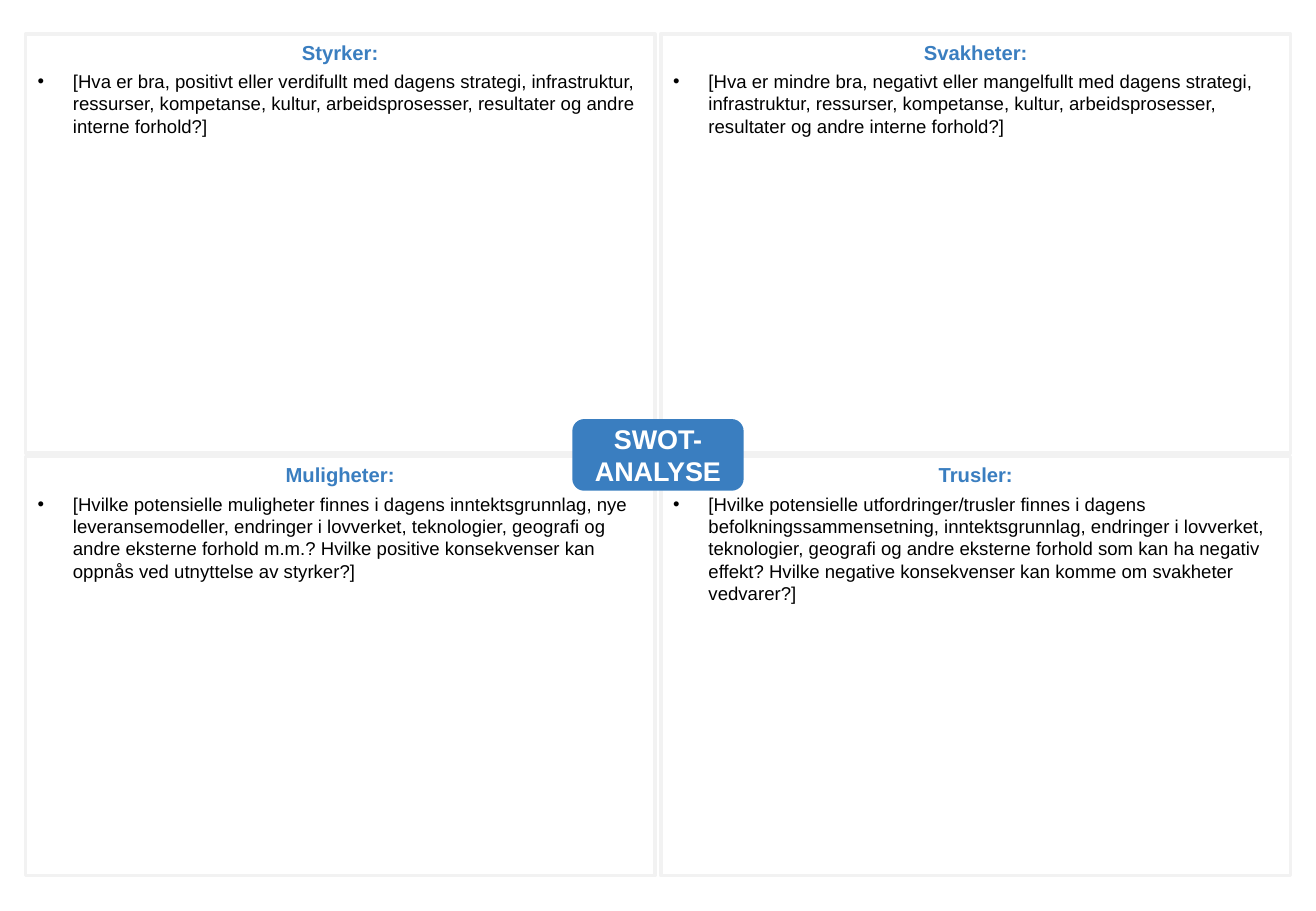
import dataclasses

import lxml.etree
import pptx
import pptx.dml.color
import pptx.enum.shapes
import pptx.enum.text
import pptx.oxml.ns
import pptx.util

Inches = pptx.util.Inches
Pt = pptx.util.Pt
Align = pptx.enum.text.PP_ALIGN
Anchor = pptx.enum.text.MSO_ANCHOR
Kind = pptx.enum.shapes.MSO_SHAPE


@dataclasses.dataclass(frozen=True)
class Theme:
    font: str = "Arial"
    blue: str = "3A7EC0"
    white: str = "FFFFFF"
    black: str = "000000"
    edge: str = "F2F2F2"
    title: int = 16
    head: int = 12
    body: int = 11


THEME = Theme()
LEFT, TOP = 0.21, 0.28
WIDE, HIGH = 5.18, 3.45
STEP_X, STEP_Y = 5.23, 3.48
BADGE = (4.71, 3.45, 1.41, 0.59)

PARTS = [
    ("Styrker:", "[Hva er bra, positivt eller verdifullt med dagens strategi, "
     "infrastruktur, ressurser, kompetanse, kultur, arbeidsprosesser, "
     "resultater og andre interne forhold?]"),
    ("Svakheter:", "[Hva er mindre bra, negativt eller mangelfullt med dagens "
     "strategi, infrastruktur, ressurser, kompetanse, kultur, "
     "arbeidsprosesser, resultater og andre interne forhold?]"),
    ("Muligheter:", "[Hvilke potensielle muligheter finnes i dagens "
     "inntektsgrunnlag, nye leveransemodeller, endringer i lovverket, "
     "teknologier, geografi og andre eksterne forhold m.m.? Hvilke positive "
     "konsekvenser kan oppnås ved utnyttelse av styrker?]"),
    ("Trusler:", "[Hvilke potensielle utfordringer/trusler finnes i dagens "
     "befolkningssammensetning, inntektsgrunnlag, endringer i lovverket, "
     "teknologier, geografi og andre eksterne forhold som kan ha negativ "
     "effekt? Hvilke negative konsekvenser kan komme om svakheter vedvarer?]"),
]


def color(code):
    return pptx.dml.color.RGBColor.from_string(code)


def add_box(slide, kind, area, fill, edge=None):
    box = slide.shapes.add_shape(kind, *map(Inches, area))
    box.shadow.inherit = False
    box.fill.solid()
    box.fill.fore_color.rgb = color(fill)
    if edge:
        box.line.color.rgb = color(edge)
        box.line.width = Pt(2)
    else:
        box.line.fill.background()


def place(slide, holder, area, anchor):
    """Move a placeholder to an area, in front of the shapes, and return its text frame."""
    holder.left, holder.top, holder.width, holder.height = map(Inches, area)
    slide.shapes._spTree.append(holder._element)
    frame = holder.text_frame
    frame.auto_size = pptx.enum.text.MSO_AUTO_SIZE.NONE
    frame.vertical_anchor = anchor
    return frame


def set_bullet(para, char=None, indent=0):
    """Give a paragraph a hanging bullet, or none without a character."""
    props = para._p.get_or_add_pPr()
    props.set("marL", str(Inches(indent)))
    props.set("indent", str(-Inches(indent)))
    tag = pptx.oxml.ns.qn("a:buChar" if char else "a:buNone")
    mark = lxml.etree.SubElement(props, tag)
    if char:
        mark.set("char", char)


def set_style(para, size, code, bold, align, before=0, after=0):
    para.alignment = align
    para.space_before, para.space_after = Pt(before), Pt(after)
    para.font.name = THEME.font
    para.font.size = Pt(size)
    para.font.bold = bold
    para.font.color.rgb = color(code)


def add_part(slide, holder, area, head, body):
    frame = place(slide, holder, area, Anchor.TOP)
    frame.text = head + "\n" + body
    first, second = frame.paragraphs
    set_bullet(first)
    set_style(first, THEME.head, THEME.blue, True, Align.CENTER)
    set_bullet(second, "•", 0.29)
    set_style(second, THEME.body, THEME.black, False, Align.LEFT, 3.4, 3.4)


def add_title(slide):
    frame = place(slide, slide.shapes.title, BADGE, Anchor.MIDDLE)
    frame.margin_left = frame.margin_right = 0
    frame.word_wrap = False
    frame.text = "SWOT-\nANALYSE"
    for para in frame.paragraphs:
        set_style(para, THEME.title, THEME.white, True, Align.CENTER)


def main():
    deck = pptx.Presentation()
    deck.slide_width, deck.slide_height = Inches(10.83), Inches(7.5)
    slide = deck.slides.add_slide(deck.slide_layouts.get_by_name("Comparison"))
    areas = [(LEFT + col * STEP_X, TOP + row * STEP_Y, WIDE, HIGH)
             for row in range(2) for col in range(2)]
    for area in areas:
        add_box(slide, Kind.RECTANGLE, area, THEME.white, THEME.edge)
    add_box(slide, Kind.ROUNDED_RECTANGLE, BADGE, THEME.blue)
    add_title(slide)
    for idx, (area, (head, body)) in enumerate(zip(areas, PARTS), 1):
        add_part(slide, slide.placeholders[idx], area, head, body)
    deck.save("out.pptx")


if __name__ == "__main__":
    main()
